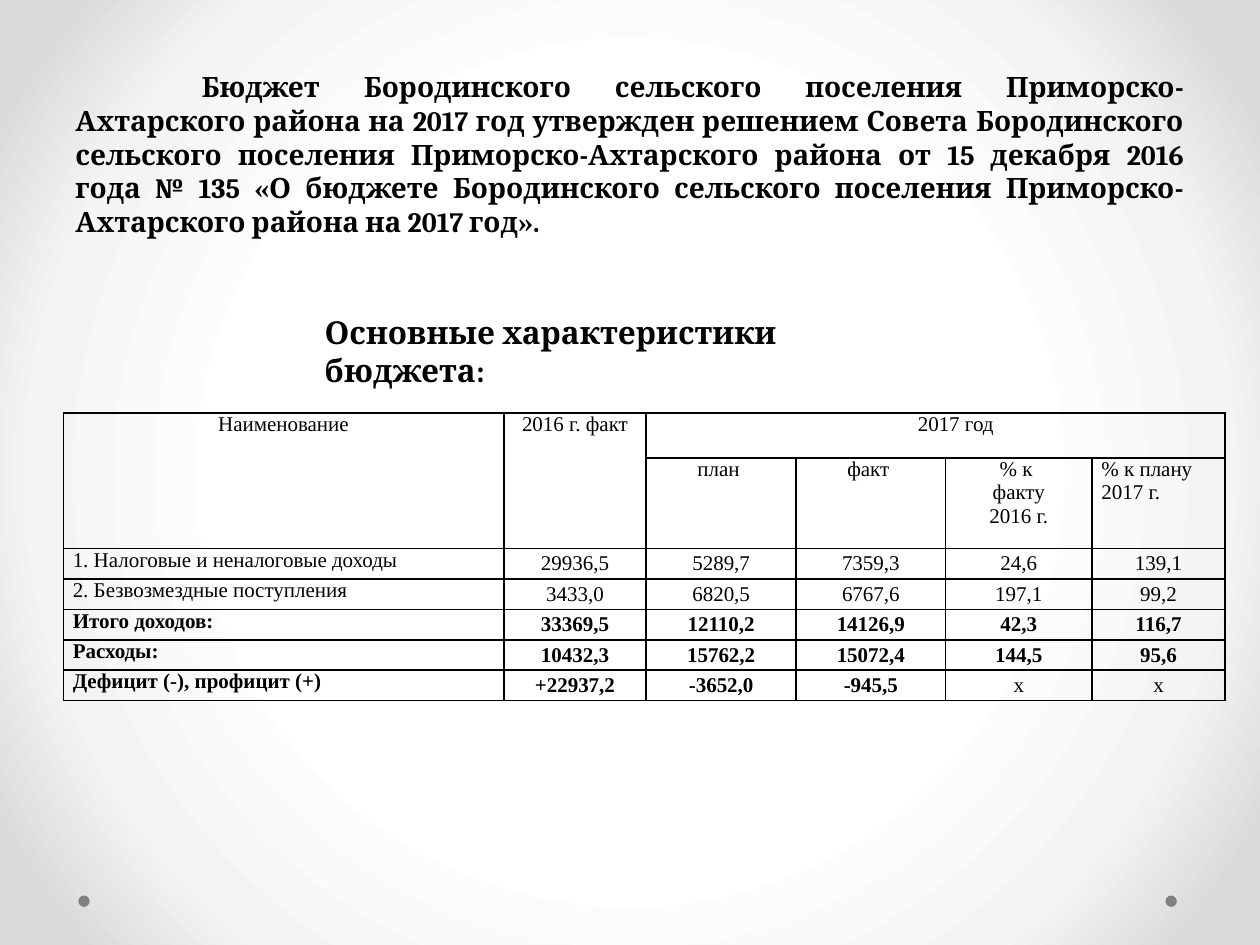
import lxml.etree
import pptx
import pptx.dml.color
import pptx.enum.shapes
import pptx.enum.text
import pptx.oxml
import pptx.oxml.ns
import pptx.util

Pt = pptx.util.Pt
Align = pptx.enum.text.PP_ALIGN
Anchor = pptx.enum.text.MSO_ANCHOR

COLORS = {"text": "000000", "dot": "808080", "center": "FFFFFF", "middle": "F4F4F4", "edge": "DADADA"}
INTRO = (
    "\tБюджет Бородинского сельского поселения Приморско-Ахтарского района на 2017 год "
    "утвержден решением Совета Бородинского сельского поселения Приморско-Ахтарского района "
    "от 15 декабря 2016 года № 135 «О бюджете Бородинского сельского поселения "
    "Приморско-Ахтарского района на 2017 год»."
)
COLUMN_WIDTHS = [251.7, 81.4, 85.7, 85.4, 83.7, 76]
ROW_HEIGHTS = [25.5, 52] + [17.35] * 5
HEADERS = [
    (0, 0, "Наименование"), (0, 1, "2016 г. факт"), (0, 2, "2017 год"),
    (1, 2, "план "), (1, 3, "факт "), (1, 4, "% к \nфакту\n2016 г."), (1, 5, "% к плану\n2017 г."),
]
MERGES = [(0, 0, 1, 0), (0, 1, 1, 1), (0, 2, 0, 5)]
BUDGET_ROWS = [
    ("1. Налоговые и неналоговые доходы", "29936,5", "5289,7", "7359,3", "24,6", "139,1"),
    ("2. Безвозмездные поступления", "3433,0", "6820,5", "6767,6", "197,1", "99,2"),
    ("Итого доходов:", "33369,5", "12110,2", "14126,9", "42,3", "116,7"),
    ("Расходы:", "10432,3", "15762,2", "15072,4", "144,5", "95,6"),
    ("Дефицит (-), профицит (+)", "+22937,2", "-3652,0", "-945,5", "х", "х"),
]


def rgb(name):
    return pptx.dml.color.RGBColor.from_string(COLORS[name])


def write_text(frame, text, *, font, size, bold=False, align=Align.LEFT, indent=0, tab=0):
    for index, line in enumerate(text.split("\n")):
        para = frame.paragraphs[0] if index == 0 else frame.add_paragraph()
        para.alignment = align
        properties = para._p.get_or_add_pPr()
        if indent:
            properties.set("marL", str(Pt(indent)))
        if tab:
            tabs = lxml.etree.SubElement(properties, pptx.oxml.ns.qn("a:tabLst"))
            lxml.etree.SubElement(tabs, pptx.oxml.ns.qn("a:tab"), pos=str(Pt(tab)), algn="l")
        span = para.add_run()
        span.text = line
        span.font.name = font
        span.font.size = Pt(size)
        span.font.bold = bold
        span.font.color.rgb = rgb("text")


class BudgetSlide:
    heading_font = "Cambria"
    table_font = "Times New Roman"
    table_size = 12
    cell_margin = 5.4
    border_width = 1

    def __init__(self, page):
        self.page = page

    def background(self, stops):
        self.page.background.fill.solid()
        properties = self.page.element.xpath("./p:cSld/p:bg/p:bgPr")[0]
        stop_xml = "".join(
            f'<a:gs pos="{position * 1000}"><a:srgbClr val="{COLORS[name]}"/></a:gs>'
            for position, name in stops
        )
        gradient = pptx.oxml.parse_xml(
            f'<a:gradFill {pptx.oxml.ns.nsdecls("a")} rotWithShape="1"><a:gsLst>{stop_xml}</a:gsLst>'
            '<a:path path="circle"><a:fillToRect l="50000" t="50000" r="50000" b="50000"/></a:path>'
            "</a:gradFill>"
        )
        properties.replace(properties[0], gradient)

    def dot(self, left, top, size):
        dot = self.page.shapes.add_shape(
            pptx.enum.shapes.MSO_SHAPE.OVAL, Pt(left), Pt(top), Pt(size), Pt(size)
        )
        dot.shadow.inherit = False
        dot.fill.solid()
        dot.fill.fore_color.rgb = rgb("dot")
        dot.line.fill.background()

    def text(self, text, left, top, width, height, *, anchor=Anchor.TOP, **text_format):
        box = self.page.shapes.add_textbox(Pt(left), Pt(top), Pt(width), Pt(height))
        box.text_frame.word_wrap = True
        box.text_frame.vertical_anchor = anchor
        write_text(box.text_frame, text, font=self.heading_font, bold=True, **text_format)

    def table(self, left, top, widths, heights):
        table = self.page.shapes.add_table(
            len(heights), len(widths), Pt(left), Pt(top), Pt(sum(widths)), Pt(sum(heights))
        ).table
        table.first_row = False
        table.horz_banding = False
        for column, width in zip(table.columns, widths):
            column.width = Pt(width)
        for row, height in zip(table.rows, heights):
            row.height = Pt(height)
        for cell in table.iter_cells():
            cell.margin_left = cell.margin_right = Pt(self.cell_margin)
            cell.margin_top = cell.margin_bottom = 0
            self.borders(cell)
            cell.fill.background()
        return table

    def borders(self, cell):
        properties = cell._tc.get_or_add_tcPr()
        for side in ("lnL", "lnR", "lnT", "lnB"):
            line = lxml.etree.SubElement(
                properties, pptx.oxml.ns.qn(f"a:{side}"), w=str(Pt(self.border_width))
            )
            fill = lxml.etree.SubElement(line, pptx.oxml.ns.qn("a:solidFill"))
            lxml.etree.SubElement(fill, pptx.oxml.ns.qn("a:srgbClr"), val=COLORS["text"])

    def cell(self, cell, text, *, anchor=Anchor.TOP, **text_format):
        cell.vertical_anchor = anchor
        write_text(cell.text_frame, text, font=self.table_font, size=self.table_size, **text_format)


def main():
    deck = pptx.Presentation()
    deck.slide_width, deck.slide_height = Pt(720), Pt(540)
    slide = BudgetSlide(deck.slides.add_slide(deck.slide_layouts[6]))

    slide.background([(50, "center"), (76, "middle"), (92, "edge")])
    for left in (666, 44.75):
        slide.dot(left, 511.75, 6.5)
    slide.text(INTRO, 36, 0, 648, 139.5, size=16, align=Align.JUSTIFY, anchor=Anchor.BOTTOM, tab=72)
    slide.text("Основные характеристики бюджета:", 178.5, 175.5, 352, 29, size=18)

    table = slide.table(36.2, 236.1, COLUMN_WIDTHS, ROW_HEIGHTS)
    for top, left, bottom, right in MERGES:
        table.cell(top, left).merge(table.cell(bottom, right))
    for row, column, text in HEADERS:
        align = Align.LEFT if column == 5 else Align.CENTER
        indent = 23 if text == "2017 год" else 0
        slide.cell(table.cell(row, column), text, align=align, indent=indent)
    for row, (label, *values) in enumerate(BUDGET_ROWS, start=2):
        bold = row >= 4
        slide.cell(table.cell(row, 0), label, bold=bold)
        for column, value in enumerate(values, start=1):
            slide.cell(
                table.cell(row, column), value,
                bold=bold and value != "х", align=Align.CENTER, anchor=Anchor.MIDDLE,
            )

    deck.save("out.pptx")


if __name__ == "__main__":
    main()
